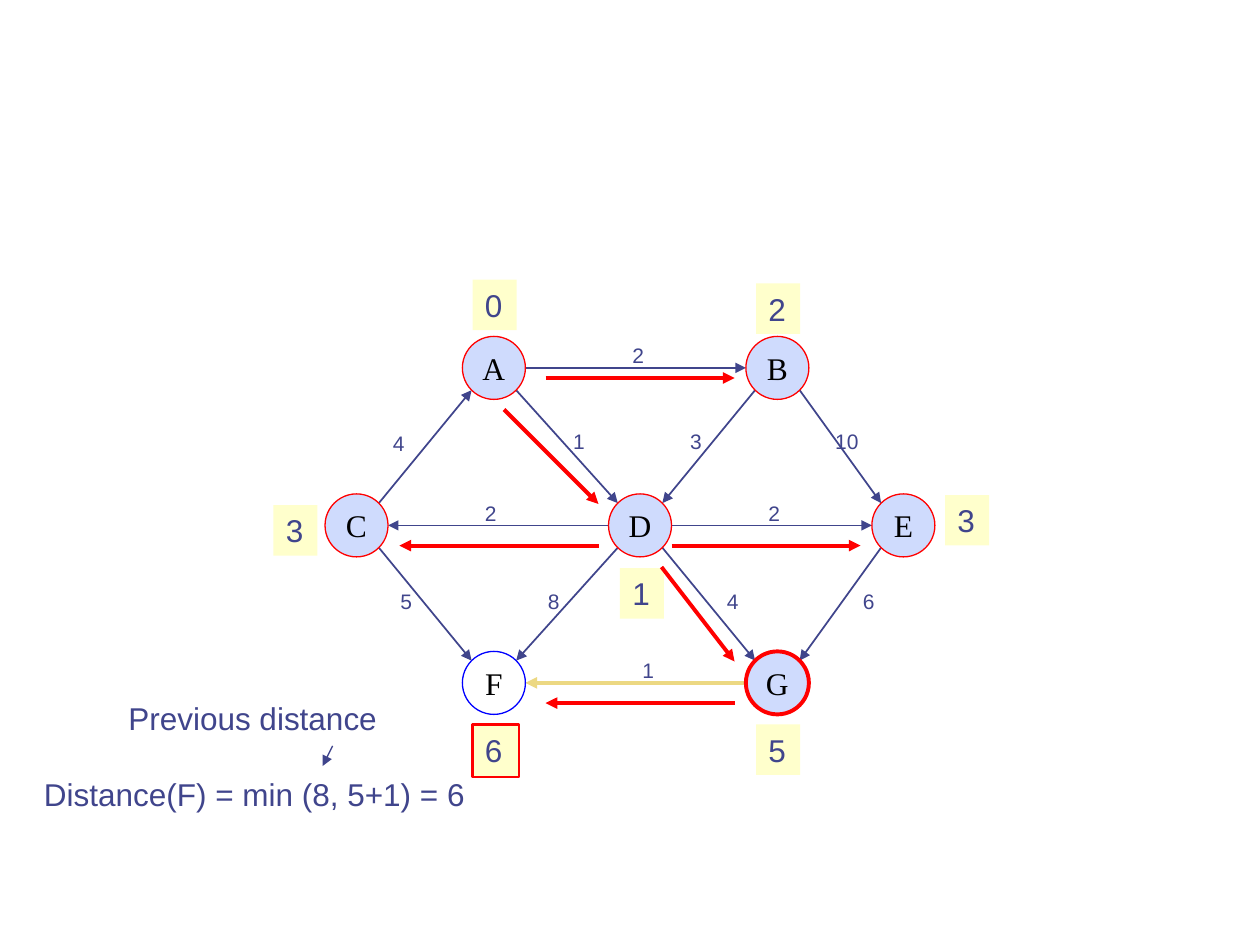
import math
from dataclasses import dataclass

import lxml.etree
import pptx
import pptx.dml.color
import pptx.enum.shapes
import pptx.enum.text
import pptx.oxml.ns
import pptx.util

Inches = pptx.util.Inches
Pt = pptx.util.Pt
RADIUS = 0.25


@dataclass(frozen=True)
class Theme:
    ink: str = "40458C"
    black: str = "000000"
    red: str = "FF0000"
    blue: str = "0000FF"
    gold: str = "ECD882"
    visited: str = "CFDBFD"
    score: str = "FFFFCC"
    sans: str = "Arial"
    serif: str = "Times New Roman"
    body_size: int = 18
    weight_size: int = 12


def rgb(code):
    return pptx.dml.color.RGBColor.from_string(code)


class GraphSlide:
    def __init__(self, slide, theme):
        self.shapes = slide.shapes
        self.theme = theme

    def set_text(self, shape, text, size, font, color, wrap=False,
                 middle=False, centred=False, grow=True):
        frame = shape.text_frame
        frame.text = text
        frame.word_wrap = wrap
        anchor = pptx.enum.text.MSO_ANCHOR
        frame.vertical_anchor = anchor.MIDDLE if middle else anchor.TOP
        fit = pptx.enum.text.MSO_AUTO_SIZE
        frame.auto_size = fit.SHAPE_TO_FIT_TEXT if grow else fit.NONE
        align = pptx.enum.text.PP_ALIGN
        paragraph = frame.paragraphs[0]
        paragraph.alignment = align.CENTER if centred else align.LEFT
        run = paragraph.runs[0]
        run.font.size = Pt(size)
        run.font.name = font
        run.font.color.rgb = rgb(color)

    def block(self, kind, left, top, width, height, fill, line, line_width):
        shape = self.shapes.add_shape(
            kind, Inches(left), Inches(top), Inches(width), Inches(height))
        shape.shadow.inherit = False
        if fill:
            shape.fill.solid()
            shape.fill.fore_color.rgb = rgb(fill)
        else:
            shape.fill.background()
        if line:
            shape.line.color.rgb = rgb(line)
            shape.line.width = Pt(line_width)
        else:
            shape.line.fill.background()
        return shape

    def node(self, name, centre, fill, line, line_width):
        x, y = centre
        circle = self.block(
            pptx.enum.shapes.MSO_SHAPE.OVAL, x - RADIUS, y - RADIUS,
            2 * RADIUS, 2 * RADIUS, fill, line, line_width)
        self.set_text(circle, name, self.theme.body_size, self.theme.serif,
                      self.theme.black, middle=True, centred=True, grow=False)

    def score(self, value, left, top, width=0.35, height=0.4, line=None):
        box = self.block(pptx.enum.shapes.MSO_SHAPE.RECTANGLE, left, top,
                         width, height, self.theme.score, line, 1.25)
        self.set_text(box, value, self.theme.body_size, self.theme.sans,
                      self.theme.ink)

    def text_box(self, left, top, width, height):
        return self.shapes.add_textbox(
            Inches(left), Inches(top), Inches(width), Inches(height))

    def weight(self, value, left, top):
        box = self.text_box(left, top, 0.2 + 0.1 * len(value), 0.3)
        self.set_text(box, value, self.theme.weight_size, self.theme.sans,
                      self.theme.ink, middle=True)

    def note(self, text, left, top, width):
        box = self.text_box(left, top, width, 0.4)
        self.set_text(box, text, self.theme.body_size, self.theme.sans,
                      self.theme.ink, wrap=True)

    def arrow(self, start, end, color, width):
        connector = self.shapes.add_connector(
            pptx.enum.shapes.MSO_CONNECTOR.STRAIGHT,
            *(Inches(value) for value in (*start, *end)))
        connector.line.color.rgb = rgb(color)
        connector.line.width = Pt(width)
        qn = pptx.oxml.ns.qn
        properties = connector.element.spPr
        lxml.etree.SubElement(
            properties.find(qn("a:ln")), qn("a:tailEnd"), type="triangle")
        lxml.etree.SubElement(properties, qn("a:effectLst"))

    def edge(self, source, target, color, width):
        """Join two circles at their nearest side or diagonal points."""
        dx, dy = (b - a for a, b in zip(source, target))
        reach = RADIUS * math.sqrt(0.5) if dx and dy else RADIUS
        step_x = math.copysign(reach, dx) if dx else 0
        step_y = math.copysign(reach, dy) if dy else 0
        self.arrow((source[0] + step_x, source[1] + step_y),
                   (target[0] - step_x, target[1] - step_y), color, width)


CENTRES = {
    "A": (3.92, 2.92), "B": (6.17, 2.92),
    "C": (2.83, 4.17), "D": (5.08, 4.17), "E": (7.17, 4.17),
    "F": (3.92, 5.42), "G": (6.17, 5.42),
}

# Source, target, weight and the weight's left and top
EDGES = [
    ("A", "B", "2", 4.92, 2.67), ("A", "D", "1", 4.45, 3.35),
    ("B", "D", "3", 5.38, 3.35), ("B", "E", "10", 6.53, 3.35),
    ("C", "A", "4", 3.02, 3.37), ("C", "F", "5", 3.08, 4.62),
    ("D", "C", "2", 3.75, 3.92), ("D", "E", "2", 6, 3.92),
    ("D", "F", "8", 4.25, 4.62), ("D", "G", "4", 5.67, 4.62),
    ("E", "G", "6", 6.75, 4.62), ("G", "F", "1", 5, 5.17),
]

SCORES = [
    ("0", 3.75, 2.22), ("2", 6, 2.25), ("3", 2.17, 4.01),
    ("3", 7.5, 3.93), ("1", 4.92, 4.51), ("5", 6, 5.75),
]

SHORTEST_STEPS = [
    ((4, 3.25), (4.75, 4)), ((4.33, 3), (5.83, 3)),
    ((5.33, 4.33), (6.83, 4.33)), ((5.25, 4.5), (5.83, 5.25)),
    ((5.83, 5.58), (4.33, 5.58)), ((4.75, 4.33), (3.17, 4.33)),
]


def main():
    deck = pptx.Presentation()
    deck.slide_width, deck.slide_height = Inches(10), Inches(7.5)
    theme = Theme()
    graph = GraphSlide(deck.slides.add_slide(deck.slide_layouts[6]), theme)

    # Edges, with the one under examination in gold
    for source, target, *_ in EDGES:
        current = (source, target) == ("G", "F")
        graph.edge(CENTRES[source], CENTRES[target],
                   theme.gold if current else theme.ink, 2.25 if current else 1)

    # Nodes: F is unvisited, G is the current one
    for name, centre in CENTRES.items():
        unvisited = name == "F"
        graph.node(name, centre, None if unvisited else theme.visited,
                   theme.blue if unvisited else theme.red,
                   2.25 if name == "G" else 0.75)

    # Edge weights and node distances
    for _, _, value, left, top in EDGES:
        graph.weight(value, left, top)
    for value, left, top in SCORES:
        graph.score(value, left, top)
    graph.score("6", 3.75, 5.75, 0.37, 0.42, theme.red)

    # Shortest-path tree
    for start, end in SHORTEST_STEPS:
        graph.arrow(start, end, theme.red, 2.25)

    # Distance update for F
    graph.note("Distance(F) = min (8, 5+1) = 6", 0.25, 6.1, 3.92)
    graph.note("Previous distance", 0.92, 5.5, 2.25)
    graph.arrow((2.64, 5.92), (2.56, 6.08), theme.ink, 0.75)

    deck.save("out.pptx")


if __name__ == "__main__":
    main()
